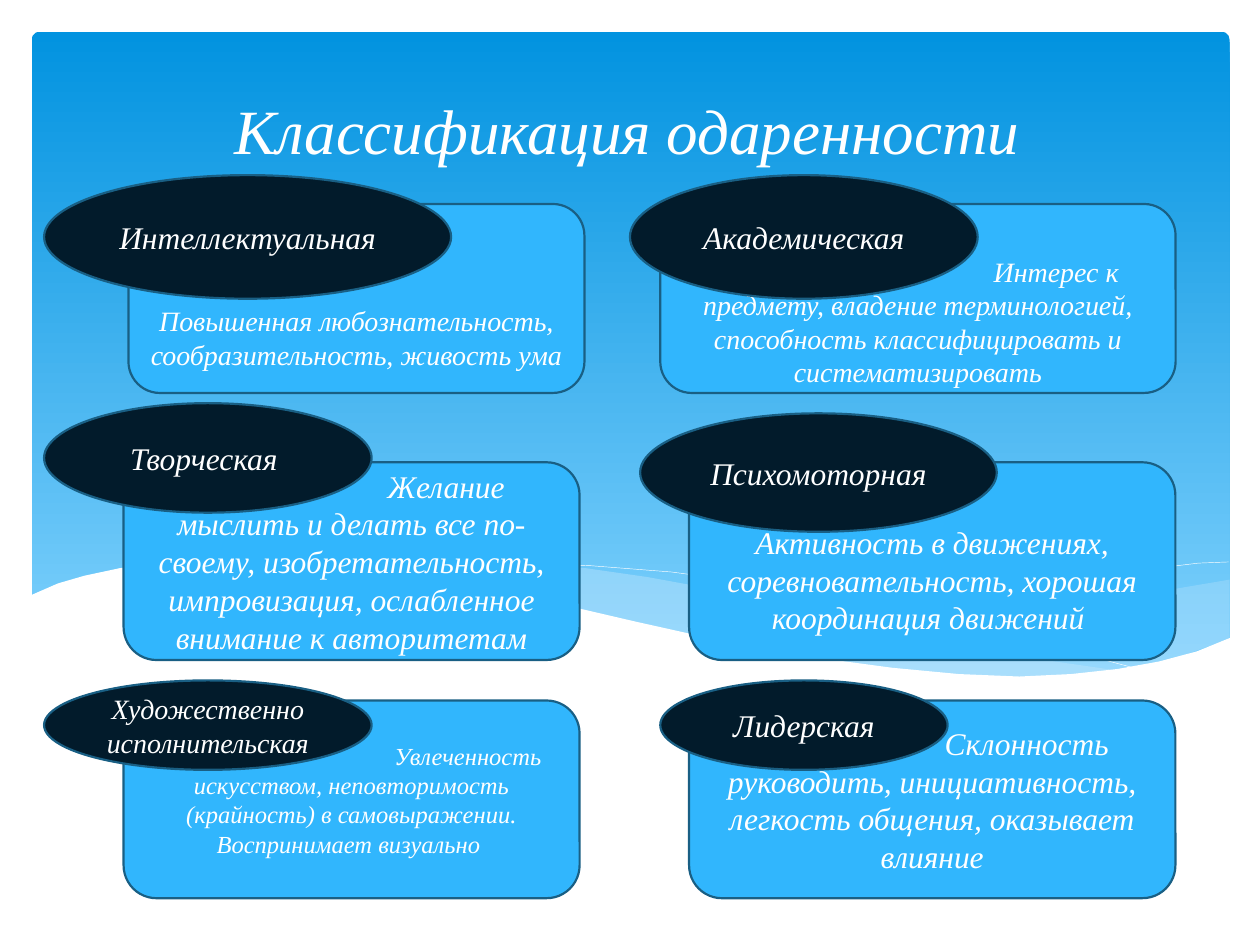
from dataclasses import dataclass
from typing import NamedTuple

import lxml.etree
import pptx
import pptx.dml.color
import pptx.enum.shapes
import pptx.enum.text
import pptx.oxml.ns
import pptx.util

Pt = pptx.util.Pt
RGB = pptx.dml.color.RGBColor.from_string
Preset = pptx.enum.shapes.MSO_SHAPE
Anchor = pptx.enum.text.MSO_ANCHOR
CENTER = pptx.enum.text.PP_ALIGN.CENTER
Points = list[tuple[float, float]]


@dataclass(frozen=True)
class Theme:
    font: str = "Times New Roman"
    text: str = "FFFFFF"
    sky_top: str = "0293E0"
    sky_bottom: str = "83D3FE"
    wave: str = "C6E7FC"
    foam: str = "FFFFFF"
    card: str = "31B6FD"
    oval: str = "021B2B"
    outline: str = "195F84"
    title_size: float = 36
    large: float = 18
    medium: float = 16
    small: float = 14
    outline_width: float = 1.25
    hairline: float = 0.25


class Box(NamedTuple):
    left: float
    top: float
    width: float
    height: float


@dataclass(frozen=True)
class Giftedness:
    """A kind of giftedness; indent and drop keep its text clear of the oval."""
    name: str
    oval: Box
    traits: str
    card: Box
    name_size: float
    traits_size: float
    indent: float = 0
    drop: float = 0


THEME = Theme()
INSET = 3.6

TOP, MIDDLE, BOTTOM = 116.6, 264.2, 400.3
LEFT, RIGHT = 70.6, 393.8
OVAL_LEFT = 25.2
LEFT_WIDTH, RIGHT_WIDTH = 260.6, 277.9
TOP_HEIGHT, CARD_HEIGHT = 108, 113

KINDS = [
    Giftedness("Интеллектуальная", Box(OVAL_LEFT, 100.1, 232.6, 70.6),
               "Повышенная любознательность, сообразительность, живость ума",
               Box(73.4, TOP, LEFT_WIDTH, TOP_HEIGHT),
               THEME.large, THEME.medium, drop=44),
    Giftedness("Академическая", Box(360, 100.1, 198.7, 70.6),
               "Интерес к предмету, владение терминологией, "
               "способность классифицировать и систематизировать",
               Box(377.3, TOP, 294.5, TOP_HEIGHT),
               THEME.large, THEME.medium, indent=158, drop=26),
    Giftedness("Творческая ", Box(OVAL_LEFT, 230.4, 187.2, 62.6),
               "Желание мыслить и делать все по-своему, изобретательность, "
               "импровизация, ослабленное внимание к авторитетам",
               Box(LEFT, MIDDLE, LEFT_WIDTH, CARD_HEIGHT),
               THEME.large, THEME.large, indent=108),
    Giftedness("Психомоторная", Box(365.8, 236.2, 203.8, 67.7),
               "Активность в движениях, соревновательность, "
               "хорошая координация движений ",
               Box(RIGHT, MIDDLE, RIGHT_WIDTH, CARD_HEIGHT),
               THEME.large, THEME.large, drop=21),
    Giftedness("Художественно исполнительская", Box(OVAL_LEFT, 388.8, 187.2, 51.1),
               "Увлеченность искусством, неповторимость (крайность) "
               "в самовыражении. Воспринимает визуально ",
               Box(LEFT, BOTTOM, LEFT_WIDTH, CARD_HEIGHT),
               THEME.medium, THEME.small, indent=133),
    Giftedness("Лидерская", Box(377.3, 388.8, 164.2, 51.1),
               "Склонность руководить, инициативность, "
               "легкость общения, оказывает влияние",
               Box(RIGHT, BOTTOM, RIGHT_WIDTH, CARD_HEIGHT),
               THEME.large, THEME.large, indent=108),
]

RIGHT_WAVE = [
    (702.7, 331.2), (673.2, 336.2), (641.5, 342.7), (599, 352.8), (560.9, 362.2),
    (524.9, 369.4), (475.9, 378), (507.6, 382.3), (536.4, 385.2), (578.2, 387.4),
    (607.7, 386.6), (640.1, 383), (668.2, 377.3), (702.7, 365)]
LEFT_WAVE = [
    (643, 383.8), (602.6, 378), (558, 370.1), (508.3, 360), (452.9, 347),
    (409.7, 337), (370.1, 329.8), (334.8, 324.7), (302.4, 321.8), (273.6, 321.1),
    (236.2, 321.8), (205.9, 325.4), (246.2, 330.5), (290.9, 339.1), (323.3, 347),
    (381.6, 360.7), (432.7, 370.8), (478.8, 378.7), (519.8, 384.5), (556.6, 387.4),
    (589, 388.1), (617, 386.6)]
FALLING_CREST = [
    (222.5, 328.3), (236.2, 325.4), (261.4, 323.3), (299.5, 321.8), (337.7, 323.3),
    (383.8, 326.9), (437.8, 334.1), (500.4, 344.9), (572.4, 361.4), (653, 383)]
RISING_CREST = [
    (441.4, 372.2), (483.8, 360.7), (538.6, 347.8), (580.3, 338.4), (623.5, 330.5),
    (655.2, 325.4), (684.7, 321.8), (702, 321.1)]
FOAM = [
    (703.4, 364.3), (684, 372.2), (662.4, 378), (638.6, 382.3), (612, 385.2),
    (582.5, 386.6), (547.9, 385.2), (509.8, 381.6), (466.6, 375.8), (416.9, 367.2),
    (362.2, 355), (321.8, 345.6), (262.8, 332.6), (210.2, 324.7), (165.6, 320.4),
    (127.4, 319.7), (95, 321.1), (68.4, 324.7), (48.2, 329), (33.1, 333.4),
    (16.6, 340.6), (16.6, 424.1), (703.4, 424.1)]


def add_preset(slide, preset, box: Box):
    shape = slide.shapes.add_shape(preset, *map(Pt, box))
    shape.shadow.inherit = False
    return shape


def add_outline(slide, points: Points, closed: bool):
    start, *rest = [(Pt(x), Pt(y)) for x, y in points]
    builder = slide.shapes.build_freeform(*start, scale=1.0)
    builder.add_line_segments(rest, close=closed)
    shape = builder.convert_to_shape()
    shape.shadow.inherit = False
    return shape


def add_wave(slide, points: Points, color: str, opacity: int = 100) -> None:
    wave = add_outline(slide, points, closed=True)
    wave.fill.solid()
    wave.fill.fore_color.rgb = RGB(color)
    wave.line.fill.background()
    if opacity < 100:
        tint = wave.element.spPr.find(".//" + pptx.oxml.ns.qn("a:srgbClr"))
        lxml.etree.SubElement(tint, pptx.oxml.ns.qn("a:alpha"), val=str(opacity * 1000))


def add_crest(slide, points: Points) -> None:
    crest = add_outline(slide, points, closed=False)
    crest.fill.background()
    crest.line.color.rgb = RGB(THEME.foam)
    crest.line.width = Pt(THEME.hairline)


def add_sky(slide) -> None:
    sky = add_preset(slide, Preset.ROUNDED_RECTANGLE, Box(18, 18, 684.7, 373))
    sky.adjustments[0] = 0.013
    sky.fill.gradient()
    sky.fill.gradient_angle = 270
    for stop, color in zip(sky.fill.gradient_stops, (THEME.sky_top, THEME.sky_bottom)):
        stop.color.rgb = RGB(color)
    sky.line.fill.background()


def write(shape, text: str, size: float, anchor=Anchor.MIDDLE):
    frame = shape.text_frame
    frame.word_wrap = True
    frame.vertical_anchor = anchor
    paragraph = frame.paragraphs[0]
    paragraph.text = text
    paragraph.alignment = CENTER
    font = paragraph.font
    font.name, font.size, font.italic = THEME.font, Pt(size), True
    font.color.rgb = RGB(THEME.text)
    return paragraph


def add_label(slide, preset, box: Box, color: str, text: str, size: float):
    label = add_preset(slide, preset, box)
    label.fill.solid()
    label.fill.fore_color.rgb = RGB(color)
    label.line.color.rgb = RGB(THEME.outline)
    label.line.width = Pt(THEME.outline_width)
    return label, write(label, text, size)


def add_kind(slide, kind: Giftedness) -> None:
    card, traits = add_label(slide, Preset.ROUNDED_RECTANGLE, kind.card, THEME.card,
                             kind.traits, kind.traits_size)
    card.text_frame.margin_top = Pt(INSET + kind.drop)
    if kind.indent:
        traits._p.get_or_add_pPr().set("indent", str(Pt(kind.indent)))
    add_label(slide, Preset.OVAL, kind.oval, THEME.oval, kind.name, kind.name_size)


def add_title(slide, text: str, box: Box) -> None:
    """Fill the title placeholder and lift it above the background."""
    title = slide.shapes.title
    title.left, title.top, title.width, title.height = map(Pt, box)
    write(title, text, THEME.title_size, Anchor.BOTTOM)
    title.element.getparent().append(title.element)


def main() -> None:
    deck = pptx.Presentation()
    deck.slide_width, deck.slide_height = Pt(720), Pt(540)
    slide = deck.slides.add_slide(deck.slide_layouts.get_by_name("Title Only"))
    add_sky(slide)
    add_wave(slide, RIGHT_WAVE, THEME.wave, opacity=29)
    add_wave(slide, LEFT_WAVE, THEME.wave, opacity=40)
    for crest in (FALLING_CREST, RISING_CREST):
        add_crest(slide, crest)
    add_wave(slide, FOAM, THEME.foam)
    add_title(slide, "Классификация одаренности ", Box(82.1, 31.7, 561.6, 67.7))
    for kind in KINDS:
        add_kind(slide, kind)
    deck.save("out.pptx")


if __name__ == "__main__":
    main()
